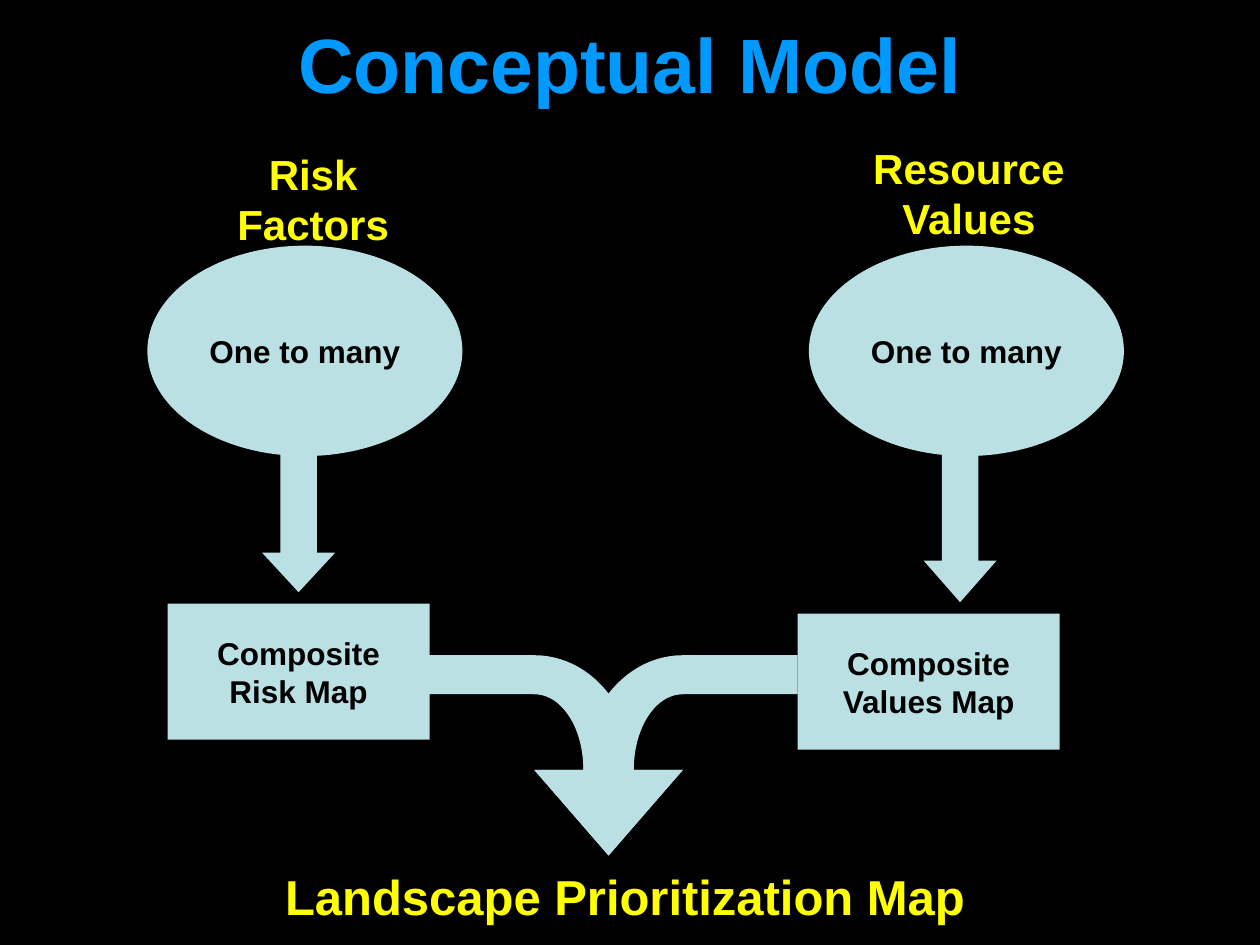
import dataclasses

import pptx
import pptx.dml.color
import pptx.enum.shapes
import pptx.enum.text
import pptx.util

Inches = pptx.util.Inches
Shapes = pptx.enum.shapes.MSO_SHAPE
Anchor = pptx.enum.text.MSO_ANCHOR
AutoSize = pptx.enum.text.MSO_AUTO_SIZE


@dataclasses.dataclass(frozen=True)
class Theme:
    font: str = "Arial"
    background: str = "000000"
    title: str = "0099FF"
    label: str = "FFFF00"
    fill: str = "BBE0E3"
    ink: str = "000000"
    title_size: int = 44
    result_size: int = 28
    label_size: int = 24
    node_size: int = 18


THEME = Theme()


def color(value):
    return pptx.dml.color.RGBColor.from_string(value)


def write_text(shape, text, *, size, ink, wrap=False, anchor=Anchor.MIDDLE, fit=AutoSize.NONE):
    frame = shape.text_frame
    frame.word_wrap = wrap
    frame.auto_size = fit
    frame.vertical_anchor = anchor
    for index, line in enumerate(text.split("\n")):
        para = frame.paragraphs[0] if index == 0 else frame.add_paragraph()
        para.alignment = pptx.enum.text.PP_ALIGN.CENTER
        span = para.add_run()
        span.text = line
        span.font.name = THEME.font
        span.font.size = pptx.util.Pt(size)
        span.font.bold = True
        span.font.color.rgb = color(ink)


def paint(shape):
    shape.shadow.inherit = False
    shape.fill.solid()
    shape.fill.fore_color.rgb = color(THEME.fill)
    shape.line.fill.background()


def add_node(page, kind, box, text=""):
    shape = page.shapes.add_shape(kind, *map(Inches, box))
    paint(shape)
    if text:
        write_text(shape, text, size=THEME.node_size, ink=THEME.ink)
    return shape


def add_label(page, box, text, size, wrap=False):
    shape = page.shapes.add_textbox(*map(Inches, box))
    write_text(shape, text, size=size, ink=THEME.label, wrap=wrap,
               anchor=Anchor.TOP, fit=AutoSize.SHAPE_TO_FIT_TEXT)


def add_title(page, box, text):
    title = page.shapes.title
    title.left, title.top, title.width, title.height = map(Inches, box)
    write_text(title, text, size=THEME.title_size, ink=THEME.title, wrap=True)


def add_branch(page, box, label, label_box, result, result_box, arrow_height, head):
    left, top, width, height = box
    add_label(page, label_box, label, THEME.label_size)
    add_node(page, Shapes.OVAL, box, "One to many")
    arrow_box = (left + 0.91, top + 1.5, 0.58, arrow_height)
    arrow = add_node(page, Shapes.DOWN_ARROW, arrow_box)
    arrow.adjustments[0] = 0.5
    arrow.adjustments[1] = head
    add_node(page, Shapes.RECTANGLE, result_box, result)


def curve(start, first, second, end, steps=24):
    points = []
    for step in range(steps + 1):
        t = step / steps
        weights = ((1 - t) ** 3, 3 * t * (1 - t) ** 2, 3 * t * t * (1 - t), t ** 3)
        points.append(tuple(
            sum(weight * value for weight, value in zip(weights, values))
            for values in zip(start, first, second, end)))
    return points


def add_merge_arrow(page, box, mirrored=False):
    left, top, width, height = box
    neck = 0.91
    outline = [
        (1.5, height), (width, neck),
        *curve((1.7, neck), (1.7, 0.41), (1.35, 0), (neck, 0)),
        (0, 0), (0, 0.31),
        *curve((neck, 0.31), (1.13, 0.31), (1.3, 0.58), (1.3, neck)),
        (neck, neck),
    ]
    points = [(Inches(left + (width - x if mirrored else x)), Inches(top + y))
              for x, y in outline]
    builder = page.shapes.build_freeform(*points[0])
    builder.add_line_segments(points[1:], close=True)
    paint(builder.convert_to_shape())


def main():
    deck = pptx.Presentation()
    deck.slide_width, deck.slide_height = Inches(10), Inches(7.5)
    page = deck.slides.add_slide(deck.slide_layouts[5])
    page.background.fill.solid()
    page.background.fill.fore_color.rgb = color(THEME.background)

    add_title(page, (0, 0, 10, 1), "Conceptual Model")
    add_branch(page, (1.17, 1.95, 2.5, 1.67), "Risk\nFactors", (1.78, 1.13, 1.41, 0.9),
               "Composite\nRisk Map", (1.33, 4.79, 2.08, 1.08), 1.25, 0.54)
    add_branch(page, (6.42, 1.95, 2.5, 1.67), "Resource\nValues", (6.83, 1.08, 1.72, 0.9),
               "Composite\nValues Map", (6.33, 4.87, 2.08, 1.08), 1.33, 0.57)
    add_merge_arrow(page, (3.33, 5.2, 2.09, 1.59))
    add_merge_arrow(page, (4.24, 5.2, 2.09, 1.59), mirrored=True)
    add_label(page, (1.25, 6.83, 7.42, 0.57), "Landscape Prioritization Map",
              THEME.result_size, wrap=True)
    deck.save("out.pptx")


if __name__ == "__main__":
    main()
